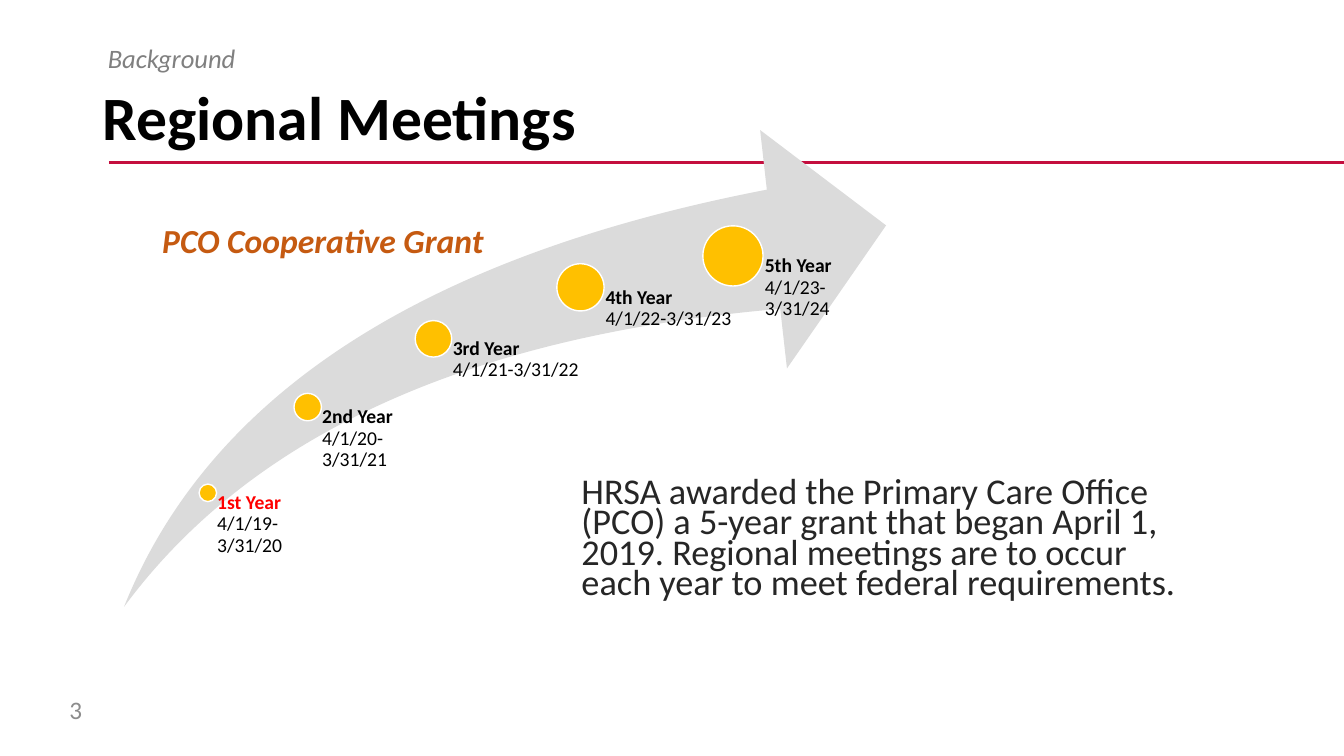
from lxml import etree
from pptx import Presentation
from pptx.dml.color import RGBColor
from pptx.enum.shapes import MSO_CONNECTOR, MSO_SHAPE
from pptx.enum.text import MSO_ANCHOR, MSO_AUTO_SIZE, PP_ALIGN
from pptx.oxml.ns import qn
from pptx.util import Inches, Pt

FONT = "Calibri"
WHITE = RGBColor(0xFF, 0xFF, 0xFF)
BLACK = RGBColor(0x00, 0x00, 0x00)
CHARCOAL = RGBColor(0x26, 0x26, 0x26)
GREY = RGBColor(0x80, 0x80, 0x80)
NUMBER_GREY = RGBColor(0x8C, 0x8C, 0x8C)
ARROW_GREY = RGBColor(0xDB, 0xDB, 0xDB)
CRIMSON = RGBColor(0xC4, 0x0E, 0x3E)
RED = RGBColor(0xFF, 0x00, 0x00)
GOLD = RGBColor(0xFF, 0xC0, 0x00)
ORANGE = RGBColor(0xC5, 0x5A, 0x11)

# The slide is a grid of 100 columns by 100 rows
SLIDE_WIDTH, SLIDE_HEIGHT = Inches(13.33), Inches(7.5)
ARROW_AREA = (9.23, 17.2, 56.7, 63.07)

# Year, dates, colour, then percent of the arrow: centre x, centre y,
# dot diameter, label width
MILESTONES = [
    ("1st Year", "4/1/19-3/31/20", RED, 11, 76.1, 2.3, 13.1),
    ("2nd Year", "4/1/20-3/31/21", BLACK, 24.1, 58.1, 3.6, 16.5),
    ("3rd Year", "4/1/21-3/31/22", BLACK, 40.6, 43.8, 4.8, 19.3),
    ("4th Year", "4/1/22-3/31/23", BLACK, 59.9, 33, 6.2, 20),
    ("5th Year", "4/1/23-3/31/24", BLACK, 79.9, 26.4, 7.9, 20),
]
INSET_PER_DIAMETER = 0.53


def column(count):
    return round(SLIDE_WIDTH * count / 100)


def row(count):
    return round(SLIDE_HEIGHT * count / 100)


def grid(left, top, width, height):
    return column(left), row(top), column(width), row(height)


def write_text(box, spans, size, spacing=1.0, anchor=MSO_ANCHOR.TOP,
               wrap=True, italic=False):
    """Fill one paragraph with spans of (text, colour, bold)."""
    frame = box.text_frame
    frame.auto_size = MSO_AUTO_SIZE.NONE
    frame.word_wrap = wrap
    frame.vertical_anchor = anchor
    para = frame.paragraphs[0]
    para.alignment = PP_ALIGN.LEFT
    para.line_spacing = spacing
    for text, colour, bold in spans:
        span = para.add_run()
        span.text = text
        span.font.name = FONT
        span.font.size = Pt(size)
        span.font.bold = bold
        span.font.italic = italic
        span.font.color.rgb = colour


def add_text(page, area, text, colour, size, bold=False, **style):
    box = page.shapes.add_textbox(*grid(*area))
    write_text(box, [(text, colour, bold)], size, **style)


def add_filled(page, kind, area, fill, outline=None):
    shape = page.shapes.add_shape(kind, *area)
    shape.shadow.inherit = False
    shape.fill.solid()
    shape.fill.fore_color.rgb = fill
    if outline is None:
        shape.line.fill.background()
    else:
        shape.line.color.rgb = outline
        shape.line.width = Pt(1)
    return shape


def add_rule(page):
    rule = page.shapes.add_connector(
        MSO_CONNECTOR.STRAIGHT, column(8.1), row(21.47), SLIDE_WIDTH, row(21.47))
    rule.line.color.rgb = CRIMSON
    rule.line.width = Pt(2.25)
    etree.SubElement(rule._element.spPr, qn("a:effectLst"))


def add_milestone(page, year, dates, colour, *shares):
    left, top, width, height = grid(*ARROW_AREA)
    across, down, dot_share, label_share = (share / 100 for share in shares)
    centre_x, centre_y = round(left + width * across), round(top + height * down)
    diameter = round(width * dot_share)

    dot_area = (centre_x - diameter // 2, centre_y - diameter // 2,
                diameter, diameter)
    add_filled(page, MSO_SHAPE.OVAL, dot_area, GOLD, WHITE)

    # The label hangs from the dot's centre to the foot of the arrow
    label = page.shapes.add_textbox(centre_x, centre_y,
                                    round(width * label_share),
                                    top + height - centre_y)
    frame = label.text_frame
    frame.margin_left = round(diameter * INSET_PER_DIAMETER)
    frame.margin_top = frame.margin_right = frame.margin_bottom = 0
    write_text(label, [(year + " ", colour, True), (dates, BLACK, False)],
               14, spacing=0.9)


def main():
    deck = Presentation()
    deck.slide_width, deck.slide_height = SLIDE_WIDTH, SLIDE_HEIGHT
    page = deck.slides.add_slide(deck.slide_layouts[5])

    # Heading
    add_rule(page)
    title = page.shapes.title
    title.left, title.top, title.width, title.height = grid(6.9, 8.67, 86.25, 14.53)
    write_text(title, [("Regional Meetings", BLACK, True)], 44,
               spacing=0.9, anchor=MSO_ANCHOR.MIDDLE)
    add_text(page, (7.28, 5.33, 85.88, 5.07), "Background", GREY, 19,
             spacing=0.9, italic=True)

    # Grant timeline
    arrow = add_filled(page, MSO_SHAPE.SWOOSH_ARROW, grid(*ARROW_AREA), ARROW_GREY)
    arrow.adjustments[0] = arrow.adjustments[1] = 0.25
    for milestone in MILESTONES:
        add_milestone(page, *milestone)
    add_text(page, (11.33, 28.4, 25.65, 6.67), "PCO Cooperative Grant", ORANGE,
             24, bold=True, italic=True, wrap=False)

    # Explanation and slide number
    add_text(page, (42.53, 62.8, 45.98, 19.73),
             "HRSA awarded the Primary Care Office (PCO) a 5-year grant that "
             "began April 1, 2019. Regional meetings are to occur each year "
             "to meet federal requirements.", CHARCOAL, 25.9, spacing=0.7)
    add_text(page, (4.43, 91.2, 4.43, 5.33), "3", NUMBER_GREY, 18,
             anchor=MSO_ANCHOR.MIDDLE)

    deck.save("out.pptx")


if __name__ == "__main__":
    main()
